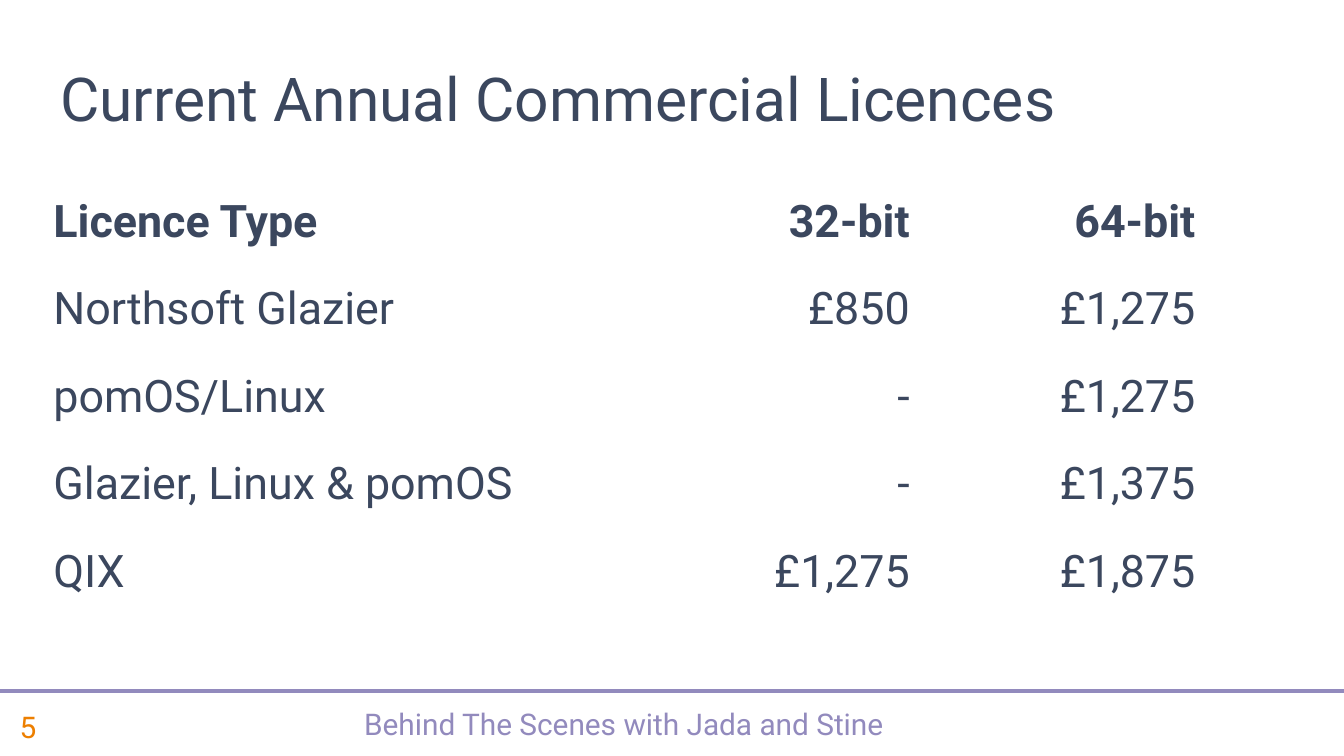
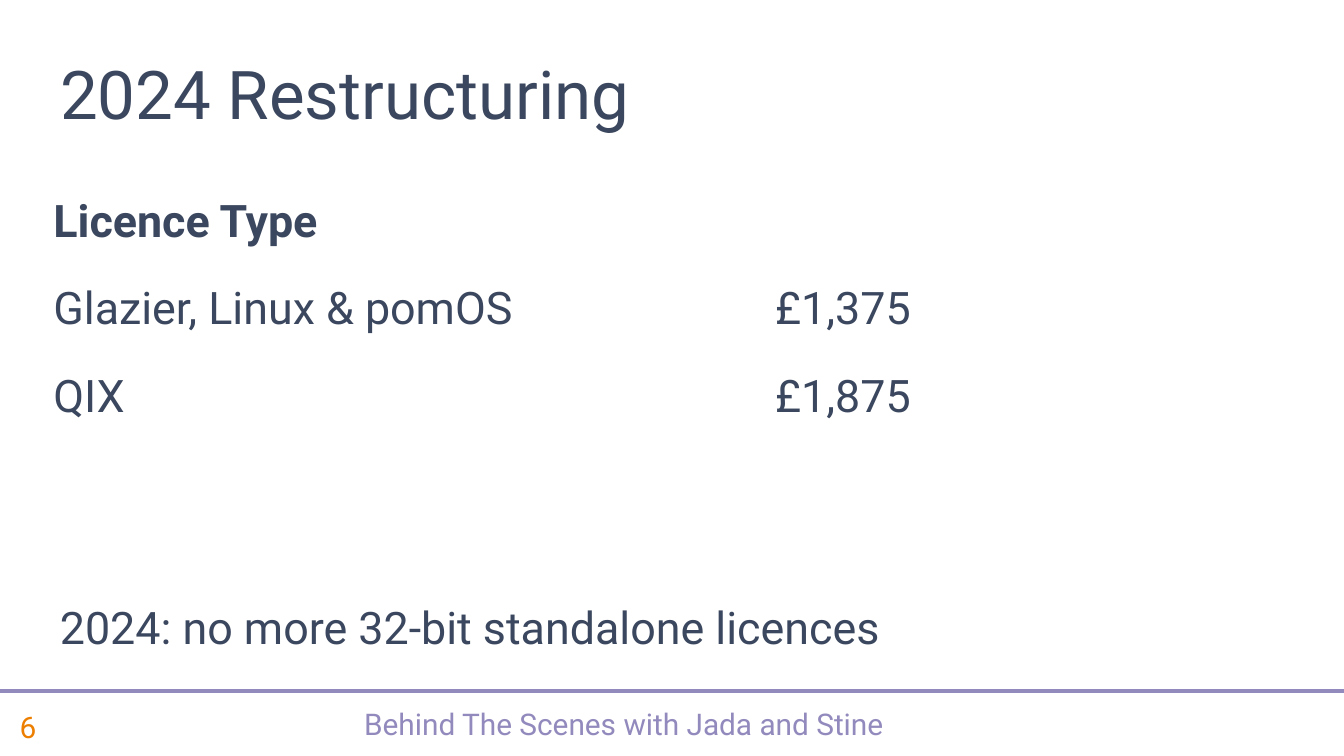
from pptx import Presentation
from pptx.dml.color import RGBColor
from pptx.enum.shapes import MSO_CONNECTOR
from pptx.enum.text import MSO_ANCHOR, MSO_AUTO_SIZE, PP_ALIGN
from pptx.oxml.ns import qn
from pptx.util import Pt
from lxml.etree import SubElement

# Shared style
FONT = "Roboto"
NAVY = RGBColor(0x3B, 0x47, 0x5E)
LAVENDER = RGBColor(0x92, 0x8A, 0xBD)
ORANGE = RGBColor(0xED, 0x7F, 0x00)
WHITE = RGBColor(0xFF, 0xFF, 0xFF)

SLIDE_WIDTH, SLIDE_HEIGHT = 720, 405
LEFT = 25
TABLE_TOP = 103
ROW_HEIGHT = 46.8
RULE_TOP = 370
FOOTER_TOP, FOOTER_HEIGHT = 373.5, 31.5
FOOTER_TEXT = "Behind The Scenes with Jada and Stine"

CURRENT_LICENCES = [
    ("Licence Type", "32-bit", "64-bit"),
    ("Northsoft Glazier", "£850", "£1,275"),
    ("pomOS/Linux", "-", "£1,275"),
    ("Glazier, Linux & pomOS", "-", "£1,375"),
    ("QIX", "£1,275", "£1,875"),
]
RESTRUCTURED_LICENCES = [
    ("Licence Type", ""),
    ("Glazier, Linux & pomOS", "£1,375"),
    ("QIX", "£1,875"),
]


def write_text(frame, text, size=24, color=NAVY, bold=False, align=PP_ALIGN.LEFT,
               anchor=MSO_ANCHOR.TOP, line_spacing=1.0, space_after=0):
    frame.word_wrap = True
    frame.auto_size = MSO_AUTO_SIZE.NONE
    frame.vertical_anchor = anchor
    format_paragraph(frame.paragraphs[0], text, size, color, bold, align,
                     line_spacing, space_after)


def format_paragraph(paragraph, text, size, color, bold, align, line_spacing, space_after):
    paragraph.text = text
    paragraph.alignment = align
    paragraph.line_spacing = line_spacing
    paragraph.space_before = Pt(0)
    paragraph.space_after = Pt(space_after)
    font = paragraph.font
    font.name, font.size, font.bold = FONT, Pt(size), bold
    font.color.rgb = color


def add_text(slide, text, left, top, width, height, **text_format):
    box = slide.shapes.add_textbox(Pt(left), Pt(top), Pt(width), Pt(height))
    write_text(box.text_frame, text, **text_format)


def add_footer(slide, number):
    add_text(slide, FOOTER_TEXT, 56, FOOTER_TOP, 556.5, FOOTER_HEIGHT, size=16,
             color=LAVENDER, align=PP_ALIGN.CENTER, anchor=MSO_ANCHOR.MIDDLE,
             line_spacing=0.8)
    add_text(slide, str(number), 3.5, FOOTER_TOP, 52.5, FOOTER_HEIGHT, size=16,
             color=ORANGE, anchor=MSO_ANCHOR.MIDDLE)
    rule = slide.shapes.add_connector(MSO_CONNECTOR.STRAIGHT, Pt(0), Pt(RULE_TOP),
                                      Pt(SLIDE_WIDTH), Pt(RULE_TOP))
    rule.line.color.rgb = LAVENDER
    rule.line.width = Pt(2.25)
    SubElement(rule._element.spPr, qn("a:effectLst"))


def add_titled_slide(presentation, title, title_size, number):
    slide = presentation.slides.add_slide(presentation.slide_layouts[5])
    slide.background.fill.solid()
    slide.background.fill.fore_color.rgb = WHITE
    add_footer(slide, number)
    shape = slide.shapes.title
    shape.left, shape.top, shape.width, shape.height = Pt(LEFT), Pt(21), Pt(551.5), Pt(54)
    write_text(shape.text_frame, title, size=title_size, anchor=MSO_ANCHOR.BOTTOM)
    return slide


def add_price_table(slide, rows, column_widths):
    frame = slide.shapes.add_table(len(rows), len(column_widths), Pt(LEFT), Pt(TABLE_TOP),
                                   Pt(sum(column_widths)), Pt(ROW_HEIGHT * len(rows)))
    table = frame.table
    table.first_row = table.horz_banding = False
    # Plain style without grid lines
    table._tbl.tblPr.find(qn("a:tableStyleId")).text = "{2D5ABB26-0587-4C30-8999-92F81FD0307C}"
    for column, width in zip(table.columns, column_widths):
        column.width = Pt(width)
    for row_index, row in enumerate(rows):
        table.rows[row_index].height = Pt(ROW_HEIGHT)
        for column_index, text in enumerate(row):
            cell = table.cell(row_index, column_index)
            cell.fill.background()
            cell.margin_left = cell.margin_right = Pt(3.6)
            cell.margin_top = cell.margin_bottom = Pt(0)
            cell.vertical_anchor = MSO_ANCHOR.TOP
            format_paragraph(cell.text_frame.paragraphs[0], text, size=24, color=NAVY,
                             bold=row_index == 0,
                             align=PP_ALIGN.RIGHT if column_index else PP_ALIGN.LEFT,
                             line_spacing=1.07, space_after=8)


def main():
    presentation = Presentation()
    presentation.slide_width, presentation.slide_height = Pt(SLIDE_WIDTH), Pt(SLIDE_HEIGHT)

    # Current prices
    slide = add_titled_slide(presentation, "Current Annual Commercial Licences", 32.4, 5)
    add_price_table(slide, CURRENT_LICENCES, (319, 147, 153))

    # Prices after the restructuring
    slide = add_titled_slide(presentation, "2024 Restructuring", 36, 6)
    add_price_table(slide, RESTRUCTURED_LICENCES, (319, 147.5))
    add_text(slide, "2024: no more 32-bit standalone licences", LEFT, 317.5, 577.5, 46,
             space_after=12)

    presentation.save("out.pptx")


if __name__ == "__main__":
    main()
